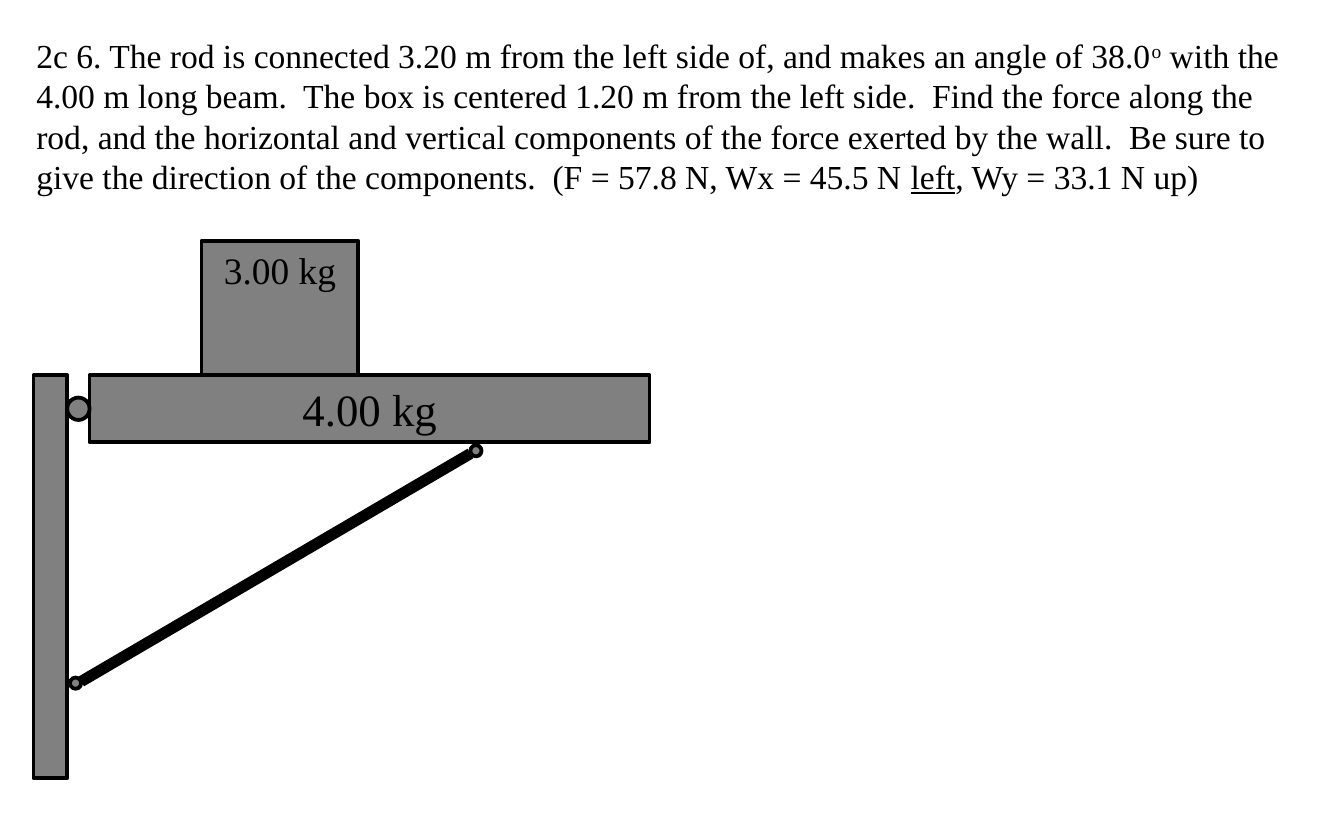
from typing import NamedTuple

from lxml import etree
from pptx import Presentation
from pptx.dml.color import RGBColor
from pptx.enum.shapes import MSO_CONNECTOR, MSO_SHAPE
from pptx.enum.text import MSO_ANCHOR, MSO_AUTO_SIZE, PP_ALIGN
from pptx.oxml.ns import qn
from pptx.util import Inches, Pt

RECTANGLE, OVAL = MSO_SHAPE.RECTANGLE, MSO_SHAPE.OVAL
STRAIGHT = MSO_CONNECTOR.STRAIGHT
TOP, LEFT, CENTER = MSO_ANCHOR.TOP, PP_ALIGN.LEFT, PP_ALIGN.CENTER
NO_RESIZE = MSO_AUTO_SIZE.NONE

CELLS_PER_INCH = 12
COLUMNS, ROWS = 120, 75
FONT = "Times New Roman"
BLACK, GRAY = "000000", "808080"
OUTLINE, ROD_WIDTH = 2, 6


class Part(NamedTuple):
    shape_type: int
    column: float
    row: float
    columns: float
    rows: float
    label: str = ""
    size: int = 18


class Span(NamedTuple):
    text: str
    underline: bool = False
    raised: bool = False


BEAM_TOP, WALL_LEFT, WALL_WIDTH, PIN = 33.5, 3, 3, 2
WALL_EDGE = WALL_LEFT + WALL_WIDTH
BOX_HEIGHT, BEAM_HEIGHT = 12, 6
FRAME = [
    Part(RECTANGLE, WALL_LEFT, BEAM_TOP, WALL_WIDTH, 36),
    Part(RECTANGLE, WALL_EDGE + PIN, BEAM_TOP, 50, BEAM_HEIGHT, "4.00 kg", 24),
    Part(OVAL, WALL_EDGE, BEAM_TOP + (BEAM_HEIGHT - PIN) / 2, PIN, PIN),
]
LOAD_AND_JOINTS = [
    Part(RECTANGLE, 18, BEAM_TOP - BOX_HEIGHT, 14, BOX_HEIGHT, "3.00 kg", 20),
    Part(OVAL, 6.25, 60.5, 1, 1),
    Part(OVAL, 42, 39.75, 1, 1),
]
ROD = (7.25, 60.85, 42, 40.5)

PROBLEM = [
    Span("2c 6. The rod is connected 3.20 m from the left side of, "
         "and makes an angle of 38.0"),
    Span("o", raised=True),
    Span(" with the 4.00 m long beam.  The box is centered 1.20 m from the left "
         "side.  Find the force along the rod, and the horizontal and vertical "
         "components of the force exerted by the wall.  Be sure to give the "
         "direction of the components.  (F = 57.8 N, Wx = 45.5 N "),
    Span("left", underline=True),
    Span(", Wy = 33.1 N up)"),
]


def cells(count: float) -> int:
    return Inches(count / CELLS_PER_INCH)


def color(code: str) -> RGBColor:
    return RGBColor.from_string(code)


def apply(target, values: dict) -> None:
    for name, value in values.items():
        setattr(target, name, value)


def set_line(line, width: float) -> None:
    line.color.rgb = color(BLACK)
    line.width = Pt(width)


def add_span(para, span: Span, size: int) -> None:
    run = para.add_run()
    run.text = span.text
    apply(run.font, {"name": FONT, "size": Pt(size), "underline": span.underline})
    run.font.color.rgb = color(BLACK)
    if span.raised:
        run.font._element.set("baseline", "30000")


def write(frame, spans: list[Span], size: int, alignment) -> None:
    apply(frame, {"word_wrap": True, "auto_size": NO_RESIZE,
                  "vertical_anchor": TOP})
    para = frame.paragraphs[0]
    para.alignment = alignment
    for span in spans:
        add_span(para, span, size)


def add_part(diagram, part: Part) -> None:
    shape = diagram.shapes.add_shape(
        part.shape_type, cells(part.column), cells(part.row),
        cells(part.columns), cells(part.rows))
    shape.shadow.inherit = False
    shape.fill.solid()
    shape.fill.fore_color.rgb = color(GRAY)
    set_line(shape.line, OUTLINE)
    if part.label:
        write(shape.text_frame, [Span(part.label)], part.size, CENTER)


def add_rod(diagram) -> None:
    rod = diagram.shapes.add_connector(STRAIGHT, *map(cells, ROD))
    set_line(rod.line, ROD_WIDTH)
    etree.SubElement(rod._element.spPr, qn("a:effectLst"))


def add_problem(page) -> None:
    title = page.shapes.title
    apply(title, {"left": Inches(0.17), "top": Inches(0.21),
                  "width": Inches(9.67), "height": Inches(1.31)})
    write(title.text_frame, PROBLEM, 18, LEFT)


def add_diagram(page) -> None:
    diagram = page.shapes.add_group_shape()
    for part in FRAME:
        add_part(diagram, part)
    add_rod(diagram)
    for part in LOAD_AND_JOINTS:
        add_part(diagram, part)


def main() -> None:
    deck = Presentation()
    apply(deck, {"slide_width": cells(COLUMNS), "slide_height": cells(ROWS)})
    page = deck.slides.add_slide(deck.slide_layouts.get_by_name("Title Only"))
    add_problem(page)
    add_diagram(page)
    deck.save("out.pptx")


if __name__ == "__main__":
    main()
